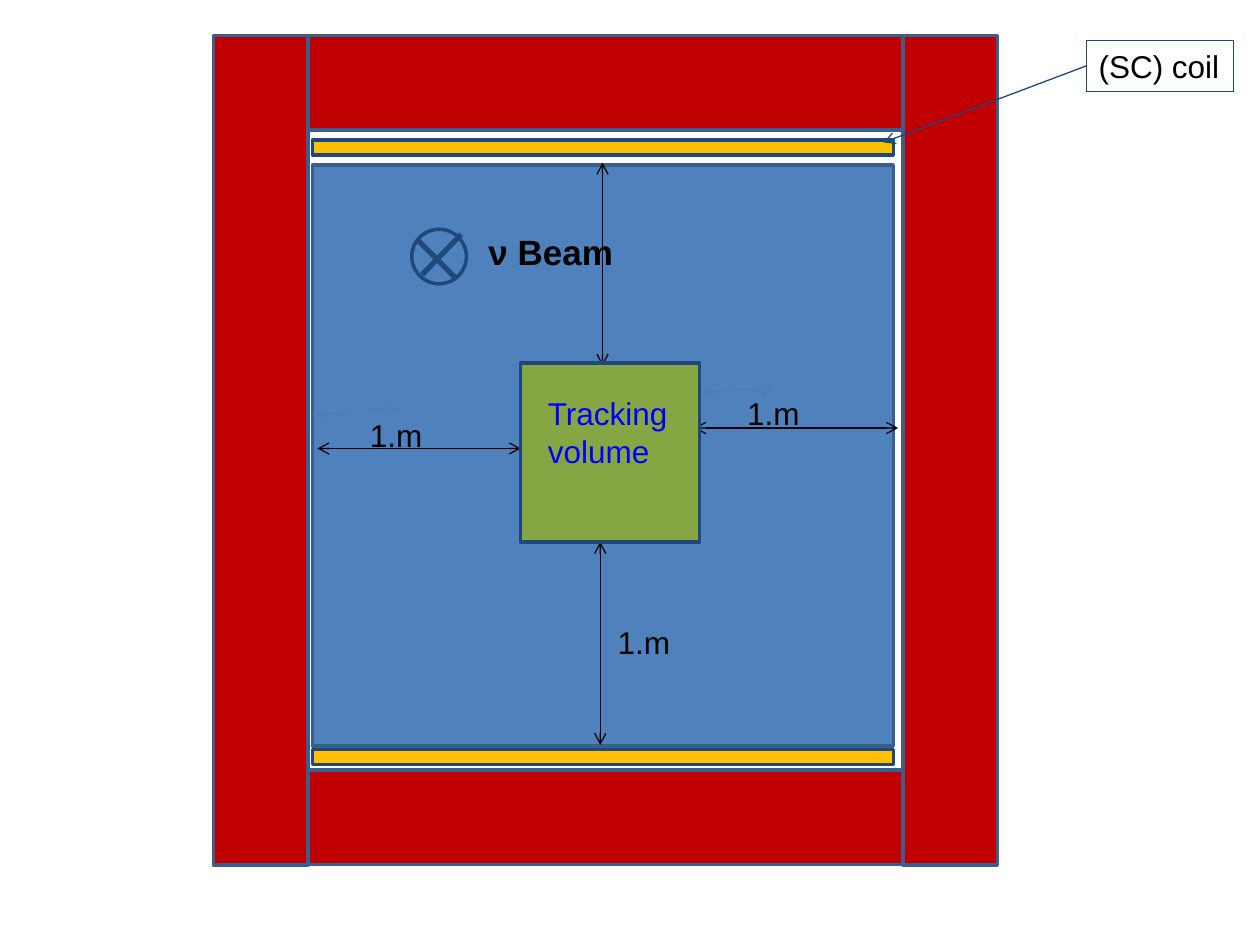
"""Build a slide showing the cross-section of a magnetised neutrino detector."""
from dataclasses import dataclass

from lxml import etree
from pptx import Presentation
from pptx.dml.color import RGBColor
from pptx.enum.shapes import MSO_CONNECTOR, MSO_SHAPE
from pptx.enum.text import MSO_AUTO_SIZE
from pptx.oxml.ns import qn
from pptx.util import Pt

RECTANGLE, OVAL = MSO_SHAPE.RECTANGLE, MSO_SHAPE.OVAL
STRAIGHT = MSO_CONNECTOR.STRAIGHT
FIT_TEXT = MSO_AUTO_SIZE.SHAPE_TO_FIT_TEXT


@dataclass(frozen=True)
class Theme:
    font: str = "Arial"
    label_size: int = 18
    beam_size: int = 20
    black: str = "000000"
    blue_text: str = "0000FF"
    field: str = "4F81BD"
    yoke: str = "C00000"
    coil: str = "FFC000"
    volume: str = "86A644"
    edge: str = "3A5F8C"
    navy: str = "1F497D"
    faint: str = "4B7EBC"
    thin: float = 0.75
    outline: float = 2
    cross: float = 3


theme = Theme()
deck = Presentation()
deck.slide_width, deck.slide_height = Pt(720), Pt(540)
page = deck.slides.add_slide(deck.slide_layouts[6])


def add_block(kind, left, top, width, height, fill, edge):
    block = page.shapes.add_shape(kind, Pt(left), Pt(top), Pt(width), Pt(height))
    block.shadow.inherit = False
    block.fill.solid()
    block.fill.fore_color.rgb = RGBColor.from_string(fill)
    block.line.color.rgb = RGBColor.from_string(edge)
    block.line.width = Pt(theme.outline)
    return block


def add_line(start, end, color, width, heads=()):
    line = page.shapes.add_connector(STRAIGHT, *map(Pt, start + end))
    line.line.color.rgb = RGBColor.from_string(color)
    line.line.width = Pt(width)
    for head in heads:
        etree.SubElement(line.line._get_or_add_ln(), qn(f"a:{head}"), type="arrow")
    etree.SubElement(line._element.spPr, qn("a:effectLst"))
    return line


field_left, field_top, field_size = 178.5, 94.3, 332
add_block(RECTANGLE, field_left, field_top, field_size, field_size, theme.field, theme.edge)

both_ends = ("headEnd", "tailEnd")
for start, end, color in (
    ((396.7, 224.6), (442.1, 221.8), theme.faint),
    ((396.7, 244.6), (513.2, 244.6), theme.black),
    ((181.4, 236.9), (226.8, 234), theme.faint),
    ((181.4, 256.3), (297.6, 256.3), theme.black),
    ((344.3, 93), (344.3, 209), theme.black),
    ((343, 309.7), (343, 425.7), theme.black),
):
    add_line(start, end, color, theme.thin, both_ends)

add_block(RECTANGLE, 297.5, 207.5, 102.2, 102.2, theme.volume, theme.navy)
for coil_top in (80, 428.4):
    add_block(RECTANGLE, field_left, coil_top, field_size, 8.6, theme.coil, theme.navy)

yoke_depth = 54
for left, top in ((139, 20.4), (144.7, 440)):
    add_block(RECTANGLE, left, top, 411, yoke_depth, theme.yoke, theme.edge)
for left in (515.9, 122):
    add_block(RECTANGLE, left, 20.4, yoke_depth, 473.8, theme.yoke, theme.edge)

add_block(OVAL, 235.3, 131, 31.2, 31.2, theme.field, theme.navy)
for start, end in (((263.5, 134), (241.2, 157)), ((238.3, 136.8), (260.6, 159.1))):
    add_line(start, end, theme.navy, theme.cross)

labels = {}
for text, left, top, width, height, size, color, bold in (
    ("1.m", 419.8, 221.8, 44.6, 29, theme.label_size, theme.black, False),
    ("1.m", 204.3, 234, 44.6, 29, theme.label_size, theme.black, False),
    ("1.m", 345.8, 352.4, 44.6, 29, theme.label_size, theme.black, False),
    ("(SC) coil", 620.7, 23.2, 84.2, 29, theme.label_size, theme.black, False),
    ("ν Beam", 272, 128.4, 85.7, 31.5, theme.beam_size, theme.black, True),
    ("Tracking\nvolume", 306, 221.8, 88.6, 72.7, theme.label_size, theme.blue_text, False),
):
    box = page.shapes.add_textbox(Pt(left), Pt(top), Pt(width), Pt(height))
    box.text_frame.text = text
    box.text_frame.word_wrap = False
    box.text_frame.auto_size = FIT_TEXT
    for para in box.text_frame.paragraphs:
        for span in para.runs:
            span.font.name = theme.font
            span.font.size = Pt(size)
            span.font.bold = bold
            span.font.color.rgb = RGBColor.from_string(color)
    labels[text] = box

coil_label = labels["(SC) coil"]
coil_label.line.color.rgb = RGBColor.from_string(theme.navy)
coil_label.line.width = Pt(theme.thin)
pointer = add_line((620.7, 37.7), (504.9, 81.4), theme.navy, theme.thin, ("tailEnd",))
pointer.begin_connect(coil_label, 1)

deck.save("out.pptx")
